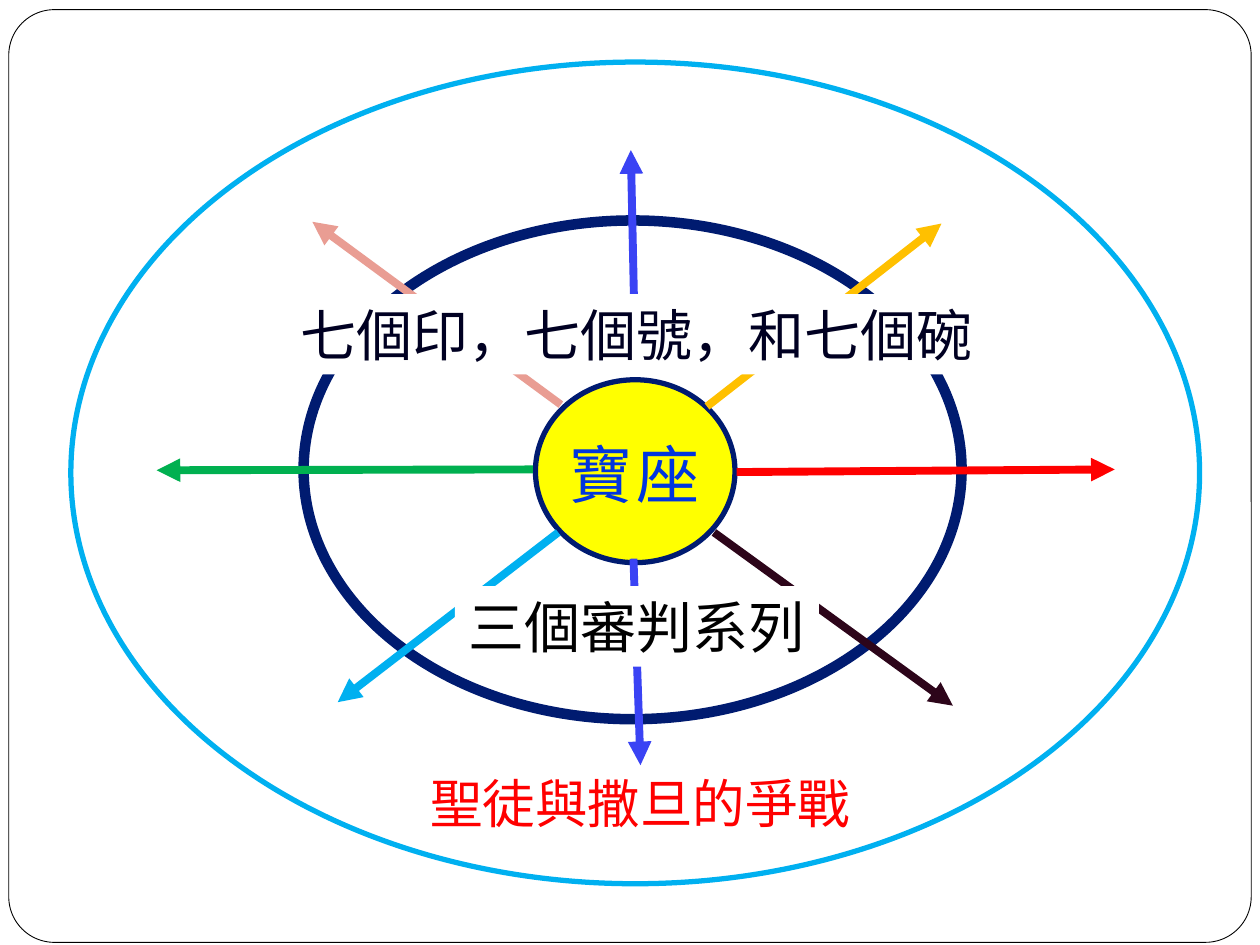
import pptx
import pptx.dml.color
import pptx.enum.shapes
import pptx.enum.text
import pptx.oxml
import pptx.oxml.ns
import pptx.util

Pt = pptx.util.Pt
SHAPES = pptx.enum.shapes.MSO_SHAPE

# Colour, start and end, as offsets from the centre of the throne
SPOKES = [
    ("00B050", (-58.5, -1), (-273.5, -0.5)),
    ("3A43F4", (0, -64.5), (-2.5, -183.5)),
    ("00B0F0", (-44, 35), (-170, 132)),
    ("E99D93", (-42.5, -38), (-184.5, -142.5)),
    ("2D051A", (45, 35), (181.5, 134)),
    ("FFC000", (41, -37), (175, -141.5)),
    ("FF0000", (58, 0.5), (274, -1)),
    ("3A43F4", (-1, 50), (3, 168)),
]


def rgb(value):
    return pptx.dml.color.RGBColor.from_string(value)


def add_outlined(slide, kind, box, line, width, fill=None):
    shape = slide.shapes.add_shape(kind, *map(Pt, box))
    shape.shadow.inherit = False
    shape.line.color.rgb = rgb(line)
    shape.line.width = Pt(width)
    if fill:
        shape.fill.solid()
        shape.fill.fore_color.rgb = rgb(fill)
    else:
        shape.fill.background()
    return shape


def add_label(slide, box, text, size, color, font="Calibri", fill=None, spacing=0):
    """Add one unwrapped line of text; spacing is in points between letters."""
    label = slide.shapes.add_textbox(*map(Pt, box))
    if fill:
        label.fill.solid()
        label.fill.fore_color.rgb = rgb(fill)
    frame = label.text_frame
    frame.word_wrap = False
    frame.auto_size = pptx.enum.text.MSO_AUTO_SIZE.SHAPE_TO_FIT_TEXT
    paragraph = frame.paragraphs[0]
    paragraph.text = text
    paragraph.alignment = pptx.enum.text.PP_ALIGN.CENTER
    paragraph.font.name = font
    paragraph.font.size = Pt(size)
    paragraph.font.color.rgb = rgb(color)
    if spacing:
        properties = paragraph._p.get_or_add_pPr().get_or_add_defRPr()
        properties.set("spc", str(round(spacing * 100)))


def add_arrow(slide, start, end, color):
    arrow = slide.shapes.add_connector(
        pptx.enum.shapes.MSO_CONNECTOR.STRAIGHT, *map(Pt, (*start, *end)))
    arrow.line.color.rgb = rgb(color)
    arrow.line.width = Pt(4.5)
    namespace = pptx.oxml.ns.nsdecls("a")
    arrow.line._get_or_add_ln().append(
        pptx.oxml.parse_xml(f'<a:tailEnd {namespace} type="triangle"/>'))
    arrow._element.spPr.append(pptx.oxml.parse_xml(f"<a:effectLst {namespace}/>"))


def add_frame(slide, box):
    frame = add_outlined(slide, SHAPES.ROUNDED_RECTANGLE, box, "000000", 0.5, "FFFFFF")
    frame.adjustments[0] = 0.049


def add_rings(slide, box):
    """Draw the outer ring filling the box, the middle ring and the throne."""
    left, top, width, height = box
    add_outlined(slide, SHAPES.OVAL, box, "00B0F0", 3)
    add_outlined(slide, SHAPES.OVAL, (left + 133, top + 90.5, 376, 285), "001B70", 6)
    add_outlined(slide, SHAPES.OVAL, (left + 265.5, top + 181.5, 114, 104.5),
                 "001B70", 3, "FFFF00")
    add_label(slide, (left + 276.5, top + 210, 91, 51), "寶座", 36, "0035DE", spacing=2.2)


def add_spokes(slide, box):
    left, top, width, height = box
    center_x, center_y = left + width / 2, top + height / 2 - 1
    for color, *ends in SPOKES:
        start, end = [(center_x + x, center_y + y) for x, y in ends]
        add_arrow(slide, start, end, color)


def add_ring_labels(slide, box):
    left, top, width, height = box
    add_label(slide, (left + 122, top + 132.5, 402.5, 46), "七個印，七個號，和七個碗",
              32, "000022", fill="FFFFFF")
    add_label(slide, (left + 219.5, top + 299.5, 208, 46), "三個審判系列",
              32, "000000", fill="FFFFFF")
    add_label(slide, (left + 197, top + 401.5, 257, 44), "聖徒與撒旦的爭戰",
              30, "FF0000", font="Cabin")


def main():
    presentation = pptx.Presentation()
    presentation.slide_width = Pt(720)
    presentation.slide_height = Pt(540)
    slide = presentation.slides.add_slide(presentation.slide_layouts[6])
    diagram = (40.5, 35.5, 645, 469.5)
    add_frame(slide, (5, 5.5, 710, 533))
    add_rings(slide, diagram)
    add_spokes(slide, diagram)
    add_ring_labels(slide, diagram)
    presentation.save("out.pptx")


if __name__ == "__main__":
    main()
